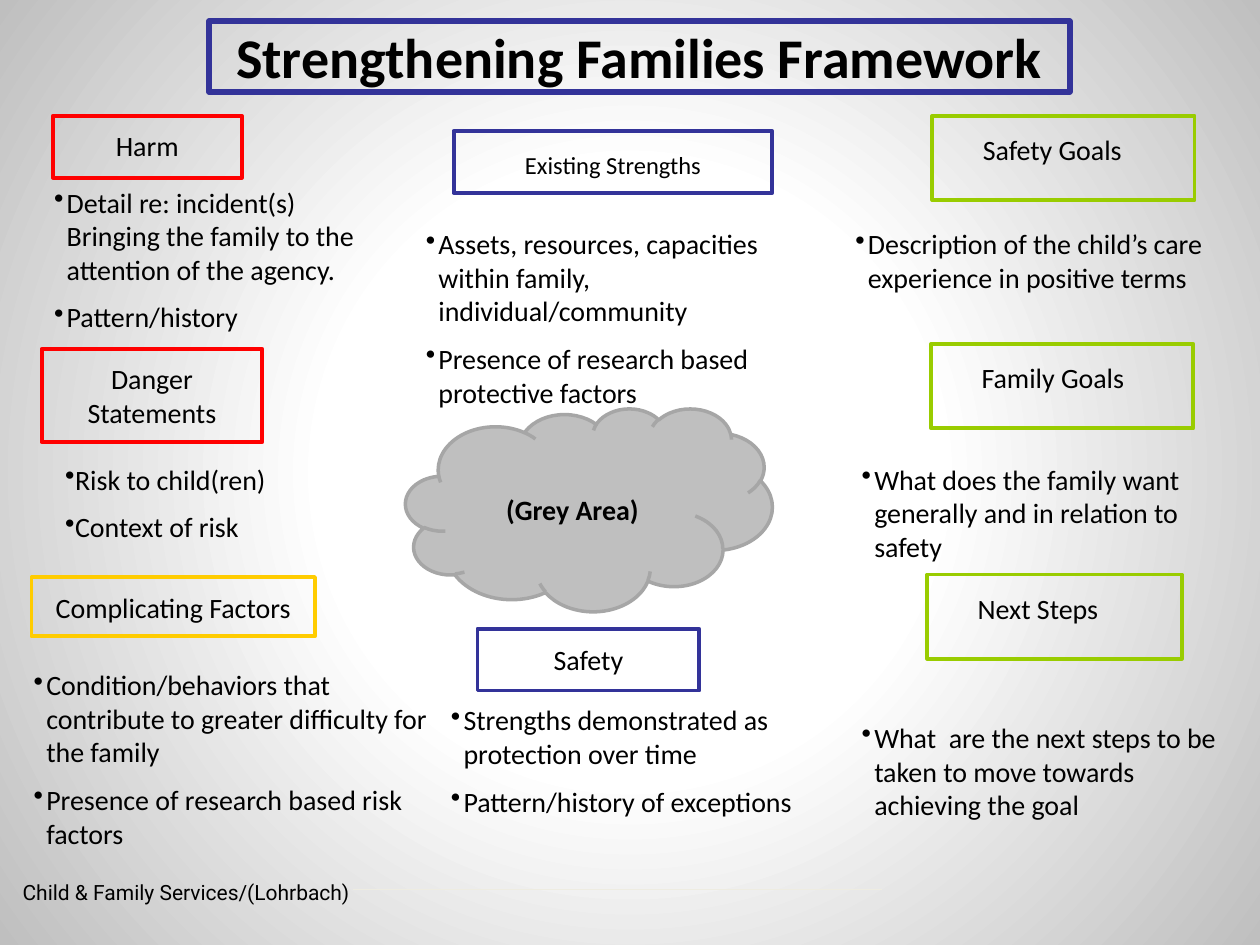
from lxml import etree
from pptx import Presentation
from pptx.dml.color import RGBColor
from pptx.enum.shapes import MSO_CONNECTOR, MSO_SHAPE
from pptx.enum.text import MSO_ANCHOR, MSO_AUTO_SIZE, PP_ALIGN
from pptx.oxml import parse_xml
from pptx.oxml.ns import qn
from pptx.util import Pt

RECT, CLOUD = MSO_SHAPE.RECTANGLE, MSO_SHAPE.CLOUD
LEFT, CENTER = PP_ALIGN.LEFT, PP_ALIGN.CENTER
TOP, MIDDLE = MSO_ANCHOR.TOP, MSO_ANCHOR.MIDDLE
GROW = MSO_AUTO_SIZE.SHAPE_TO_FIT_TEXT
STRAIGHT = MSO_CONNECTOR.STRAIGHT

RED, GOLD, BLUE, GREEN = "FF0000", "FFCC00", "333399", "99CC00"
NS = "http://schemas.openxmlformats.org/drawingml/2006/main"


def rgb(value):
    return RGBColor.from_string(value)


class Board:
    font = "Calibri"
    size = 16
    ink = "000000"
    gap = 8        # space between bullet paragraphs
    border = 2.25  # heading box outline

    def __init__(self, slide):
        self.s = slide

    def background(self, stops):
        fill = self.s.background.fill
        fill.gradient()
        old = self.s._element.find(".//" + qn("a:gradFill"))
        gs = "".join(f'<a:gs pos="{pos * 1000}"><a:srgbClr val="{color}"/></a:gs>'
                     for pos, color in stops)
        new = parse_xml(
            f'<a:gradFill xmlns:a="{NS}" rotWithShape="1"><a:gsLst>{gs}</a:gsLst>'
            '<a:path path="circle"><a:fillToRect l="50000" t="50000" r="50000" '
            'b="50000"/></a:path></a:gradFill>')
        old.getparent().replace(old, new)

    def fill_text(self, sp, lines, align=LEFT, anchor=TOP, inset=(7.2, 3.6, 7.2, 3.6),
                  bullet=False, hang=0, **style):
        tf = sp.text_frame
        frame = {"word_wrap": True, "auto_size": GROW, "vertical_anchor": anchor}
        sides = ("margin_left", "margin_top", "margin_right", "margin_bottom")
        frame.update(zip(sides, map(Pt, inset)))
        for name, value in frame.items():
            setattr(tf, name, value)
        look = {"name": self.font, "size": self.size, "bold": False} | style
        look["size"] = Pt(look["size"])
        for i, line in enumerate(lines):
            p = tf.paragraphs[0] if i == 0 else tf.add_paragraph()
            p.text = line
            p.alignment = align
            if i:
                p.space_before = Pt(self.gap)
            if bullet:
                pPr = p._p.get_or_add_pPr()
                pPr.set("marL", str(Pt(hang)))
                pPr.set("indent", str(-Pt(hang)))
                etree.SubElement(pPr, qn("a:buChar")).set("char", "•")
            for r in p.runs:
                for name, value in look.items():
                    setattr(r.font, name, value)
                r.font.color.rgb = rgb(self.ink)

    def shape(self, kind, at, line, width, fill=None):
        sp = self.s.shapes.add_shape(kind, *map(Pt, at))
        sp.shadow.inherit = False
        if fill:
            sp.fill.solid()
            sp.fill.fore_color.rgb = rgb(fill)
        else:
            sp.fill.background()
        sp.line.color.rgb = rgb(line)
        sp.line.width = Pt(width)
        return sp

    def box(self, text, at, color, inset, width=None, align=CENTER, **style):
        sp = self.shape(RECT, at, color, width or self.border)
        self.fill_text(sp, [text], align, inset=inset, **style)

    def text(self, lines, at, **style):
        self.fill_text(self.s.shapes.add_textbox(*map(Pt, at)), lines, **style)

    def bullets(self, lines, at, hang=7.2):
        self.text(lines, at, bullet=True, hang=hang)

    def rule(self, x1, y1, x2, y2, color, width):
        sp = self.s.shapes.add_connector(STRAIGHT, *map(Pt, (x1, y1, x2, y2)))
        sp.line.color.rgb = rgb(color)
        sp.line.width = Pt(width)
        etree.SubElement(sp._element.spPr, qn("a:effectLst"))


def main():
    prs = Presentation()
    prs.slide_width, prs.slide_height = Pt(720), Pt(540)
    board = Board(prs.slides.add_slide(prs.slide_layouts[6]))
    board.background([(0, "FFFFFF"), (39, "FFFFFF"), (100, "BFBFBF")])

    # Title and footer
    board.box("Strengthening Families Framework", (119.5, 12.2, 491.8, 40.3), BLUE,
              (1.4, 0.7, 1.4, 0.7), width=3.25, size=32, bold=True)
    board.rule(201.6, 508.3, 504, 508.3, "EEECE1", 0.75)
    board.text(["Child & Family Services/(Lohrbach)"], (5.8, 499, 234, 21.6),
               name="Roboto", size=12)

    # Left column: concerns
    tight = (1.4, 7.5, 1.4, 7.5)
    board.box("Harm", (30.2, 66.2, 108, 35.3), RED, tight)
    board.bullets(["Detail re: incident(s)\vBringing the family to the attention of the agency.",
                   "Pattern/history"], (23.8, 102.2, 212.4, 94.3))
    board.box("Danger Statements", (23.8, 199.4, 126, 53.3), RED, tight, anchor=MIDDLE)
    board.bullets(["Risk to child(ren)", "Context of risk"],
                  (30.2, 260.6, 169.2, 55.4), hang=0)
    board.box("Complicating Factors", (18, 329.8, 162, 33.8), GOLD, tight)
    board.bullets(["Condition/behaviors that contribute to greater difficulty for the family",
                   "Presence of research based risk factors"], (12.2, 378, 251.3, 113.8))

    # Middle column: strengths and safety
    board.box("Existing Strengths", (259.2, 74.9, 182.2, 35.3), BLUE,
              (13.7, 10.8, 13.7, 7.2), anchor=MIDDLE, size=14)
    board.bullets(["Assets, resources, capacities within family, individual/community",
                   "Presence of research based protective factors"],
                  (236.2, 126, 214.6, 113.8))
    board.box("Safety", (272.9, 359.3, 126.7, 35.3), BLUE, (13.7, 7.9, 13.7, 7.9))
    board.bullets(["Strengths demonstrated as protection over time",
                   "Pattern/history of exceptions"], (250.6, 398.2, 229, 74.9))

    # Grey area cloud
    board.shape(CLOUD, (231.8, 233.3, 209.5, 115.9), "A6A6A6", 2, fill="BFBFBF")
    board.text(["(Grey Area)"], (282.2, 277.9, 108, 26.6), bold=True)

    # Right column: goals
    goals = [("Safety Goals", 532.8, 66.2, 149.8),
             ("Family Goals", 532.1, 196.6, 149.8),
             ("Next Steps", 529.9, 328.3, 145.4)]
    for name, x, y, w in goals:
        board.box(name, (x, y, w, 48.2), GREEN, (28.8, 14.4, 28.8, 14.4), align=LEFT)
    notes = [("Description of the child’s care\vexperience in positive terms", 481.7, 126),
             ("What does the family want generally and in relation to safety", 485.3, 260.6),
             ("What  are the next steps to be taken to move towards achieving the goal",
              485.3, 408.2)]
    for note, x, y in notes:
        board.bullets([note], (x, y, 229, 65.5))

    prs.save("out.pptx")


if __name__ == "__main__":
    main()
